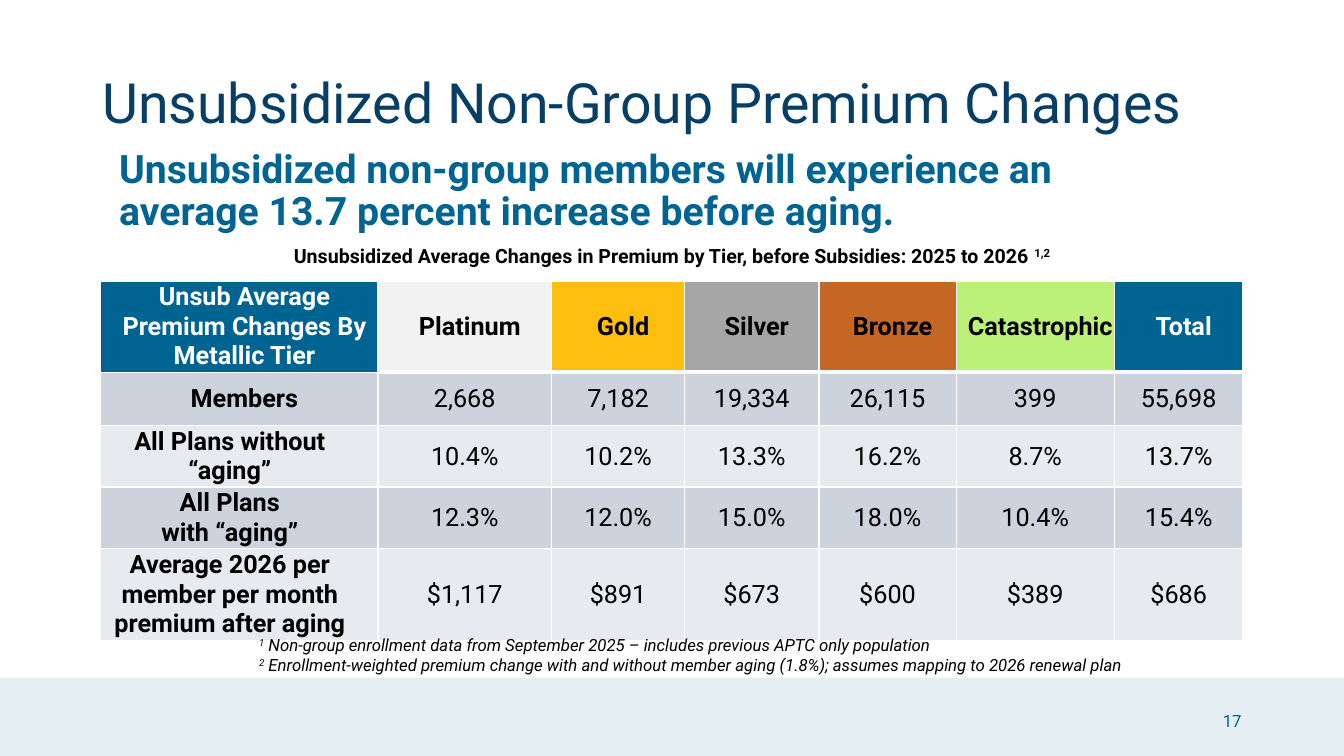
from lxml.etree import SubElement
from pptx import Presentation
from pptx.dml.color import RGBColor
from pptx.enum.shapes import MSO_SHAPE
from pptx.enum.text import MSO_ANCHOR, PP_ALIGN
from pptx.oxml.ns import qn
from pptx.util import Pt

BLUE, NAVY, BLACK, WHITE = "006493", "063E66", "000000", "FFFFFF"
TITLE = "Unsubsidized Non-Group Premium Changes"
LEAD = ("Unsubsidized non-group members will experience an "
        "average 13.7 percent increase before aging.")
# Text between carets is raised.
CAPTION = ("Unsubsidized Average Changes in Premium by Tier, "
           "before Subsidies: 2025 to 2026 ^1,2^")
NOTES = [
    "^1^ Non-group enrollment data from September 2025 – "
    "includes previous APTC only population",
    "^2^ Enrollment-weighted premium change with and without member aging "
    "(1.8%); assumes mapping to 2026 renewal plan",
]
# Heading, column width, fill, text colour
TIERS = [
    ("Unsub Average Premium Changes By Metallic Tier", 198, BLUE, WHITE),
    ("Platinum", 124, "F2F2F2", BLACK),
    ("Gold", 95, "FEBE0F", BLACK),
    ("Silver", 96, "A6A6A6", BLACK),
    ("Bronze", 98, "C56724", BLACK),
    ("Catastrophic", 113, "BBF079", BLACK),
    ("Total", 92, BLUE, WHITE),
]
# Label lines, row height, values
ROWS = [
    (["Members"], 38,
     ["2,668", "7,182", "19,334", "26,115", "399", "55,698"]),
    (["All Plans without “aging”"], 44,
     ["10.4%", "10.2%", "13.3%", "16.2%", "8.7%", "13.7%"]),
    (["All Plans", "with “aging”"], 40,
     ["12.3%", "12.0%", "15.0%", "18.0%", "10.4%", "15.4%"]),
    (["Average 2026 per member per month premium after aging"], 52,
     ["$1,117", "$891", "$673", "$600", "$389", "$686"]),
]
HEAD = 50
BANDS = ["CCD3DC", "E7EAEE"]
WIDE_PAD = (7.2, 0, 0, 0)
SLIM_PAD = (0.72, 0.72, 0.72, 0)
LABEL_PAD = (0.72, 0.72, 14.4, 0)


def color(code):
    return RGBColor.from_string(code)


def write(frame, lines, size=18, ink=BLACK, bold=False, italic=False,
          align=PP_ALIGN.LEFT, pitch=None):
    for i, line in enumerate(lines):
        para = frame.paragraphs[0] if i == 0 else frame.add_paragraph()
        para.alignment = align
        if pitch:
            para.line_spacing = pitch
        for j, part in enumerate(line.split("^")):
            if not part:
                continue
            run = para.add_run()
            run.text = part
            font = run.font
            font.name, font.size = "Roboto", Pt(size)
            font.bold, font.italic = bold, italic
            font.color.rgb = color(ink)
            if j % 2:
                run._r.get_or_add_rPr().set("baseline", "30000")


def add_text(box, lines, anchor=MSO_ANCHOR.TOP, **style):
    frame = slide.shapes.add_textbox(*map(Pt, box)).text_frame
    frame.word_wrap = True
    frame.vertical_anchor = anchor
    write(frame, lines, **style)


def add_edges(cell, widths):
    """Draw white borders; widths maps a side (L, R, T, B) to points."""
    props = cell._tc.get_or_add_tcPr()
    for n, (side, width) in enumerate(widths.items()):
        edge = props.makeelement(qn(f"a:ln{side}"), {"w": str(Pt(width))})
        fill = SubElement(edge, qn("a:solidFill"))
        SubElement(fill, qn("a:srgbClr"), val=WHITE)
        props.insert(n, edge)


def set_cell(row, col, lines, fill, pad, **style):
    cell = table.cell(row, col)
    cell.fill.solid()
    cell.fill.fore_color.rgb = color(fill)
    cell.vertical_anchor = MSO_ANCHOR.MIDDLE
    (cell.margin_left, cell.margin_top,
     cell.margin_right, cell.margin_bottom) = map(Pt, pad)
    write(cell.text_frame, lines, align=PP_ALIGN.CENTER, **style)
    if col or row > 1:
        add_edges(cell, {"L": 1, "R": 1, "T": 3 if row == 1 else 1,
                         "B": 1 if row else 3})


deck = Presentation()
deck.slide_width, deck.slide_height = Pt(960), Pt(540)
slide = deck.slides.add_slide(deck.slide_layouts[6])

footer = slide.shapes.add_shape(MSO_SHAPE.RECTANGLE, Pt(0), Pt(484),
                                Pt(960), Pt(56))
footer.shadow.inherit = False
footer.line.fill.background()
footer.fill.solid()
footer.fill.fore_color.rgb = color(BLUE)
tint = footer._element.spPr.find(".//" + qn("a:srgbClr"))
SubElement(tint, qn("a:alpha"), val="10000")

add_text((66, 47.5, 828, 55.5), [TITLE], MSO_ANCHOR.MIDDLE,
         size=39.6, ink=NAVY, pitch=0.9)
add_text((78, 103, 755, 330), [LEAD], size=28, ink=BLUE, bold=True, pitch=0.9)
add_text((72, 170.5, 816, 24.5), [CAPTION], size=14, bold=True,
         align=PP_ALIGN.CENTER)

heights = [HEAD] + [height for _, height, _ in ROWS]
widths = [width for _, width, _, _ in TIERS]
table = slide.shapes.add_table(len(heights), len(widths), Pt(72), Pt(201),
                               Pt(sum(widths)), Pt(sum(heights))).table
table.horz_banding = False
table.first_row = False
for r, height in enumerate(heights):
    table.rows[r].height = Pt(height)
for c, (name, width, fill, ink) in enumerate(TIERS):
    table.columns[c].width = Pt(width)
    set_cell(0, c, [name], fill, WIDE_PAD, ink=ink, bold=True)
for r, (label, _, values) in enumerate(ROWS, 1):
    band = BANDS[(r - 1) % 2]
    set_cell(r, 0, label, band, WIDE_PAD if r == 1 else LABEL_PAD, bold=True)
    for c, value in enumerate(values, 1):
        set_cell(r, c, [value], band, SLIM_PAD)

add_text((178, 450, 692, 51), NOTES, size=12, italic=True)
add_text((678, 500.5, 216, 29), ["17"], MSO_ANCHOR.MIDDLE, size=12,
         ink="006494", align=PP_ALIGN.RIGHT)

deck.save("out.pptx")
